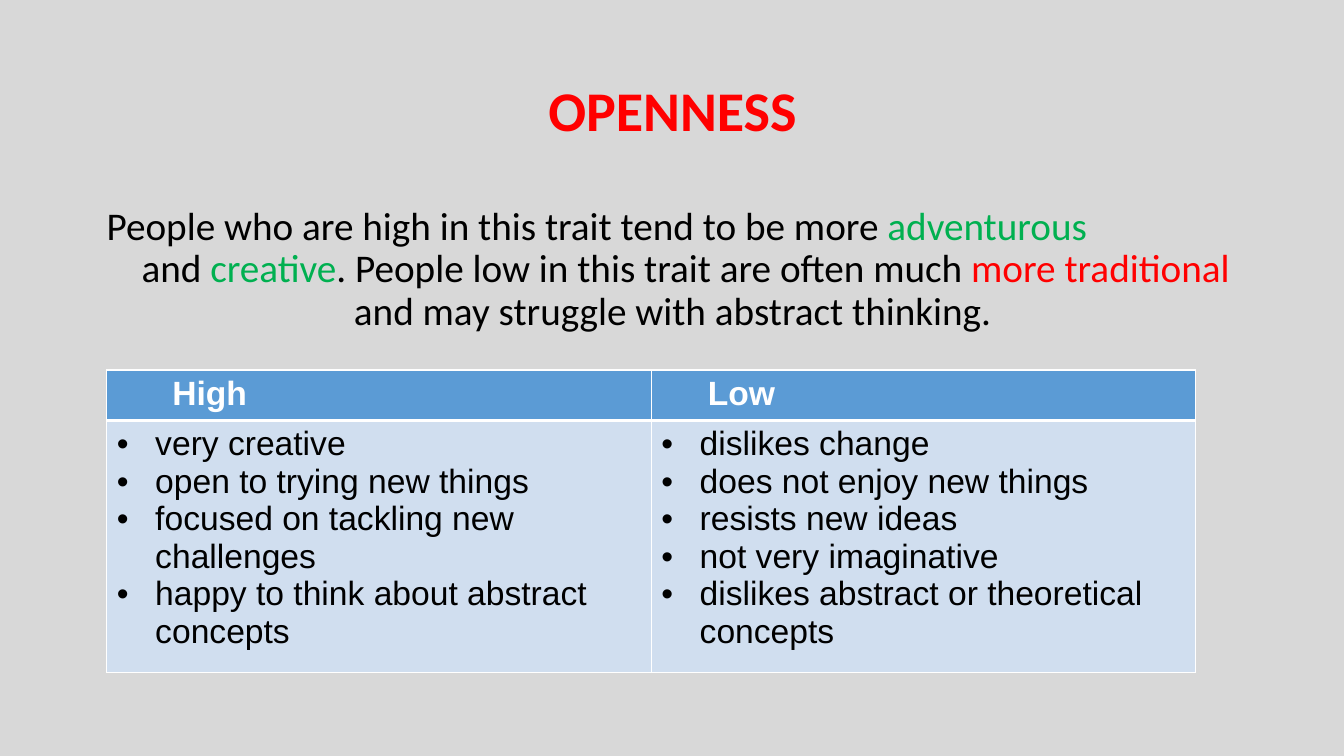
from lxml import etree
from pptx import Presentation
from pptx.dml.color import RGBColor
from pptx.enum import text
from pptx.oxml.ns import qn
from pptx.util import Inches, Pt

BACKGROUND = RGBColor(0xD8, 0xD8, 0xD8)
BLACK = RGBColor(0, 0, 0)
WHITE = RGBColor(0xFF, 0xFF, 0xFF)
RED = RGBColor(0xFF, 0, 0)
GREEN = RGBColor(0, 0xB0, 0x50)
HEADER_BLUE = RGBColor(0x5B, 0x9B, 0xD5)
BODY_BLUE = RGBColor(0xD0, 0xDE, 0xEF)

# Each column: heading, heading indent, traits
COLUMNS = [
    ("High", 0.55, ["very creative", "open to trying new things",
                    "focused on tackling new challenges",
                    "happy to think about abstract concepts"]),
    ("Low", 0.46, ["dislikes change", "does not enjoy new things",
                   "resists new ideas", "not very imaginative",
                   "dislikes abstract or theoretical concepts"]),
]


def add_run(p, words, size, color, name="Calibri", bold=False):
    r = p.add_run()
    r.text = words
    r.font.name, r.font.size, r.font.bold = name, Pt(size), bold
    r.font.color.rgb = color


def set_indent(p, left, first=0):
    pPr = p._p.get_or_add_pPr()
    pPr.set("marL", str(Inches(left)))
    pPr.set("indent", str(Inches(first)))
    return pPr


def add_bullet(p):
    pPr = set_indent(p, 0.38, -0.38)
    clr = etree.SubElement(pPr, qn("a:buClr"))
    etree.SubElement(clr, qn("a:srgbClr"), val=str(BLACK))
    etree.SubElement(pPr, qn("a:buFont"), typeface="Arial")
    etree.SubElement(pPr, qn("a:buChar"), char="•")


def add_text(s, left, top, width, height, anchor):
    tf = s.shapes.add_textbox(*map(Inches, (left, top, width, height))).text_frame
    tf.word_wrap = True
    tf.vertical_anchor = anchor
    return tf


def add_line(p, runs, size, align, bold=False):
    p.alignment = align
    p.line_spacing = 0.9
    for words, color in runs:
        add_run(p, words, size, color, bold=bold)


def style_cell(cell, fill, top=1, bottom=1):
    tcPr = cell._tc.get_or_add_tcPr()
    for side, width in (("L", 1), ("R", 1), ("T", top), ("B", bottom)):
        ln = etree.SubElement(tcPr, qn(f"a:ln{side}"), w=str(Pt(width)))
        solid = etree.SubElement(ln, qn("a:solidFill"))
        etree.SubElement(solid, qn("a:srgbClr"), val=str(WHITE))
    cell.fill.solid()
    cell.fill.fore_color.rgb = fill


def add_trait_table(s):
    table = s.shapes.add_table(2, len(COLUMNS), Inches(1.06), Inches(3.67),
                               Inches(10.8), Inches(2.8)).table
    table.rows[0].height, table.rows[1].height = Inches(0.47), Inches(2.33)
    for col, (heading, indent, traits) in enumerate(COLUMNS):
        table.columns[col].width = Inches(5.4)
        head, body = table.cell(0, col), table.cell(1, col)
        style_cell(head, HEADER_BLUE, bottom=3)
        style_cell(body, BODY_BLUE, top=3)
        p = head.text_frame.paragraphs[0]
        set_indent(p, indent)
        add_run(p, heading, 24, WHITE, "Arial", True)
        tf = body.text_frame
        for i, trait in enumerate(traits):
            p = tf.add_paragraph() if i else tf.paragraphs[0]
            add_bullet(p)
            add_run(p, trait, 24, BLACK, "Arial")


def main():
    prs = Presentation()
    prs.slide_width, prs.slide_height = Inches(13.33), Inches(7.5)
    s = prs.slides.add_slide(prs.slide_layouts[6])
    s.background.fill.solid()
    s.background.fill.fore_color.rgb = BACKGROUND

    # Title
    tf = add_text(s, 0.92, 0.4, 11.5, 1.45, text.MSO_ANCHOR.MIDDLE)
    add_line(tf.paragraphs[0], [("OPENNESS", RED)], 40, text.PP_ALIGN.CENTER, True)

    # Description
    tf = add_text(s, 0.92, 2, 11.5, 1.5, text.MSO_ANCHOR.TOP)
    p = tf.paragraphs[0]
    set_indent(p, 0.04)
    add_line(p, [("People who are high in this trait tend to be more ", BLACK),
                 ("adventurous", GREEN)], 28, text.PP_ALIGN.LEFT)
    p = tf.add_paragraph()
    set_indent(p, 0, 0.26)
    add_line(p, [("and ", BLACK), ("creative", GREEN),
                 (". People low in this trait are often much ", BLACK),
                 ("more traditional ", RED),
                 ("and may struggle with abstract thinking.", BLACK)],
             28, text.PP_ALIGN.CENTER)

    # High and low traits
    add_trait_table(s)
    prs.save("out.pptx")


if __name__ == "__main__":
    main()
